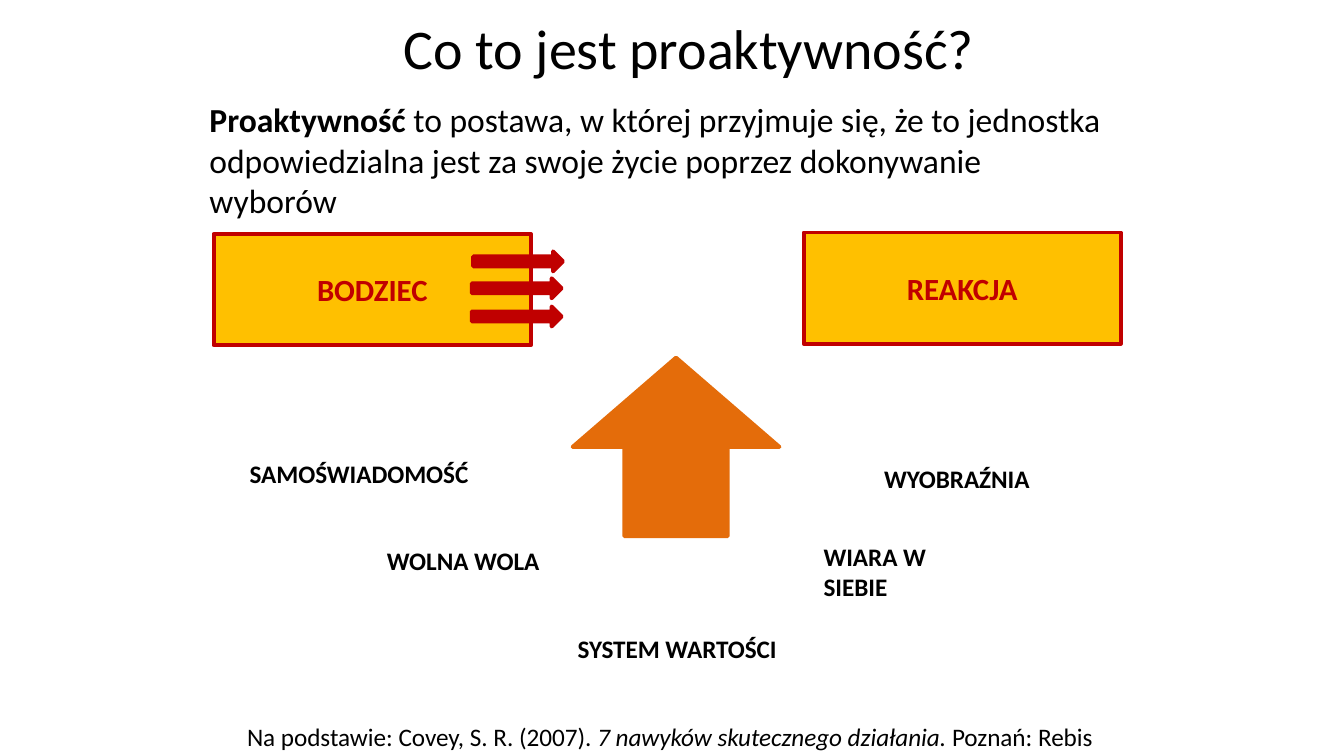
from pptx import Presentation, util as u
from pptx.dml.color import RGBColor
from pptx.enum import shapes, text

# Content: runs are (text, bold, italic); places are left, top, width, height in inches
WIDTH = 10
HEIGHT = WIDTH * 9 / 16
BLACK, RED, YELLOW, ORANGE = "000000", "C00000", "FFC000", "E46C0A"

TITLE = "Co to jest proaktywność?"
DEFINITION = [
    ("Proaktywność", True, False),
    (" to postawa, w której przyjmuje się, że to jednostka odpowiedzialna "
     "jest za swoje życie poprzez dokonywanie wyborów", False, False),
]
SOURCE = [
    ("Na podstawie: Covey, S. R. (2007). ", False, False),
    ("7 nawyków skutecznego działania. ", False, True),
    ("Poznań: Rebis", False, False),
]
EVENTS = [("BODZIEC", 1.59, 1.74), ("REAKCJA", 5.98, 1.73)]
IMPULSES = [(3.52, 1.87), (3.51, 2.07), (3.51, 2.28)]
RESOURCES = [
    ("SAMOŚWIADOMOŚĆ", (1.76, 3.36, 2.06, 0.33)),
    ("WOLNA WOLA", (2.78, 4.01, 2.06, 0.33)),
    ("WYOBRAŹNIA", (6.48, 3.4, 2.06, 0.33)),
    ("SYSTEM WARTOŚCI", (4.2, 4.66, 1.77, 0.33)),
    ("WIARA W SIEBIE", (6.03, 3.98, 1.47, 0.56)),
]

prs = Presentation()
prs.slide_width, prs.slide_height = u.Inches(WIDTH), u.Inches(HEIGHT)
slide = prs.slides.add_slide(prs.slide_layouts[5])


def color(value):
    return RGBColor.from_string(value)


def write(frame, runs, size, ink=BLACK, align=text.PP_ALIGN.LEFT):
    frame.word_wrap = True
    paragraph = frame.paragraphs[0]
    paragraph.alignment = align
    for words, bold, italic in runs:
        run = paragraph.add_run()
        run.text = words
        font = run.font
        font.name, font.size = "Calibri", u.Pt(size)
        font.bold, font.italic = bold, italic
        font.color.rgb = color(ink)


def add_text(place, runs, size):
    box = slide.shapes.add_textbox(*map(u.Inches, place))
    write(box.text_frame, runs, size)
    box.text_frame.auto_size = text.MSO_AUTO_SIZE.SHAPE_TO_FIT_TEXT


def add_figure(kind, place, fill, line):
    figure = slide.shapes.add_shape(kind, *map(u.Inches, place))
    figure.shadow.inherit = False
    figure.fill.solid()
    figure.fill.fore_color.rgb = color(fill)
    figure.line.color.rgb = color(line)
    figure.line.width = u.Pt(2)
    return figure


# Title
title = slide.shapes.title
title.left, title.top, title.width, title.height = map(
    u.Inches, (1.75, 0.01, 6.75, 0.68))
title.text_frame.vertical_anchor = text.MSO_ANCHOR.MIDDLE
write(title.text_frame, [(TITLE, False, False)], 30, align=text.PP_ALIGN.CENTER)

# Source line
add_text((1.74, 5.32, 6.56, 0.33), SOURCE, 13.5)

# Stimulus, the large arrow pointing up, and reaction
for label, left, top in EVENTS:
    event = add_figure(shapes.MSO_SHAPE.RECTANGLE, (left, top, 2.36, 0.83), YELLOW, RED)
    event.text_frame.vertical_anchor = text.MSO_ANCHOR.MIDDLE
    write(event.text_frame, [(label, True, False)], 16.5, RED, text.PP_ALIGN.CENTER)
choice = add_figure(shapes.MSO_SHAPE.DOWN_ARROW, (4.26, 2.66, 1.54, 1.33), ORANGE, ORANGE)
choice.rotation = 180

# Inner resources
for label, place in RESOURCES:
    add_text(place, [(label, True, False)], 13.5)

# Impulses leaving the stimulus
for left, top in IMPULSES:
    add_figure(shapes.MSO_SHAPE.RIGHT_ARROW, (left, top, 0.67, 0.15), RED, RED)

# Definition
add_text((1.46, 0.69, 6.89, 1.01), DEFINITION, 18)

prs.save("out.pptx")
